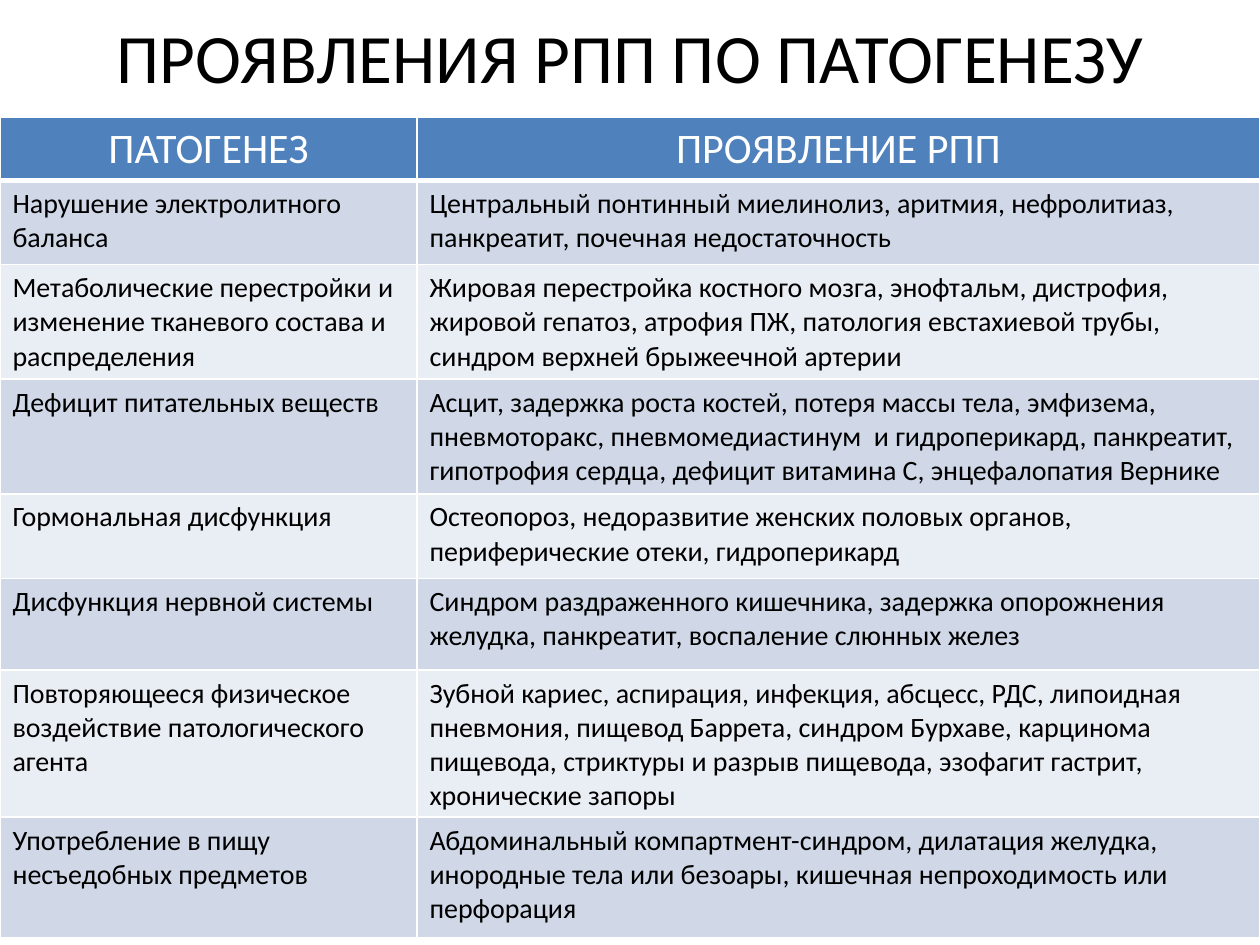
from dataclasses import dataclass

from lxml import etree
from pptx import Presentation
from pptx.dml.color import RGBColor
from pptx.enum.text import MSO_ANCHOR, PP_ALIGN
from pptx.oxml.ns import qn
from pptx.util import Inches, Pt

MIDDLE = MSO_ANCHOR.MIDDLE
CENTER, LEFT = PP_ALIGN.CENTER, PP_ALIGN.LEFT
BLANK_LAYOUT = 6


@dataclass(frozen=True)
class Theme:
    font: str = "Calibri"
    title_size: float = 39.6
    header_size: float = 24
    body_size: float = 16
    dark: str = "000000"
    light: str = "FFFFFF"
    header_fill: str = "4F81BD"
    bands: tuple[str, str] = ("D0D8E8", "E9EDF4")
    thin_line: float = 1
    thick_line: float = 3


@dataclass(frozen=True)
class Box:
    left: float
    top: float
    width: float
    height: float


@dataclass(frozen=True)
class TableRow:
    height: float
    pathogenesis: str
    manifestation: str


THEME = Theme()
SLIDE_WIDTH, SLIDE_HEIGHT = Inches(10), Inches(7.5)
TITLE = "ПРОЯВЛЕНИЯ РПП ПО ПАТОГЕНЕЗУ"
TITLE_BOX = Box(0.05, -0.025, 0.9, 0.167)
TABLE_BOX = Box(0, 0.124, 1, 0.87)
COLUMN_SHARES = (0.331, 0.669)
ROWS = (
    TableRow(0.5, "ПАТОГЕНЕЗ", "ПРОЯВЛЕНИЕ РПП"),
    TableRow(0.67, "Нарушение электролитного баланса",
             "Центральный понтинный миелинолиз, аритмия, нефролитиаз, "
             "панкреатит, почечная недостаточность"),
    TableRow(0.91, "Метаболические перестройки и изменение тканевого состава и распределения",
             "Жировая перестройка костного мозга, энофтальм, дистрофия, "
             "жировой гепатоз, атрофия ПЖ, патология евстахиевой трубы, "
             "синдром верхней брыжеечной артерии"),
    TableRow(0.91, "Дефицит питательных веществ",
             "Асцит, задержка роста костей, потеря массы тела, эмфизема, "
             "пневмоторакс, пневмомедиастинум  и гидроперикард, панкреатит, "
             "гипотрофия сердца, дефицит витамина С, энцефалопатия Вернике"),
    TableRow(0.67, "Гормональная дисфункция",
             "Остеопороз, недоразвитие женских половых органов, "
             "периферические отеки, гидроперикард"),
    TableRow(0.73, "Дисфункция нервной системы",
             "Синдром раздраженного кишечника, задержка опорожнения "
             "желудка, панкреатит, воспаление слюнных желез"),
    TableRow(0.95, "Повторяющееся физическое воздействие патологического агента",
             "Зубной кариес, аспирация, инфекция, абсцесс, РДС, липоидная "
             "пневмония, пищевод Баррета, синдром Бурхаве, карцинома "
             "пищевода, стриктуры и разрыв пищевода, эзофагит гастрит, "
             "хронические запоры"),
    TableRow(0.96, "Употребление в пищу несъедобных предметов",
             "Абдоминальный компартмент-синдром, дилатация желудка, "
             "инородные тела или безоары, кишечная непроходимость или "
             "перфорация"),
)


def place(box: Box) -> tuple[int, int, int, int]:
    return (int(box.left * SLIDE_WIDTH), int(box.top * SLIDE_HEIGHT),
            int(box.width * SLIDE_WIDTH), int(box.height * SLIDE_HEIGHT))


def write_text(text_frame, text: str, size: float, color: str, alignment) -> None:
    text_frame.text = text
    paragraph = text_frame.paragraphs[0]
    paragraph.alignment = alignment
    font = paragraph.runs[0].font
    font.name = THEME.font
    font.size = Pt(size)
    font.bold = False
    font.color.rgb = RGBColor.from_string(color)


def add_border(cell, side: str, width: float) -> None:
    properties = cell._tc.get_or_add_tcPr()
    line = etree.SubElement(properties, qn(f"a:ln{side}"), w=str(Pt(width)))
    fill = etree.SubElement(line, qn("a:solidFill"))
    etree.SubElement(fill, qn("a:srgbClr"), val=THEME.light)


def format_cell(cell, text: str, row_index: int) -> None:
    is_header = row_index == 0
    top = THEME.thick_line if row_index == 1 else THEME.thin_line
    bottom = THEME.thick_line if is_header else THEME.thin_line
    widths = {"L": THEME.thin_line, "R": THEME.thin_line, "T": top, "B": bottom}
    for side, width in widths.items():
        add_border(cell, side, width)
    band = THEME.bands[(row_index - 1) % len(THEME.bands)]
    cell.fill.solid()
    cell.fill.fore_color.rgb = RGBColor.from_string(THEME.header_fill if is_header else band)
    if is_header:
        write_text(cell.text_frame, text, THEME.header_size, THEME.light, CENTER)
    else:
        write_text(cell.text_frame, text, THEME.body_size, THEME.dark, LEFT)


def add_title(slide) -> None:
    shape = slide.shapes.add_textbox(*place(TITLE_BOX))
    shape.text_frame.word_wrap = True
    shape.text_frame.vertical_anchor = MIDDLE
    write_text(shape.text_frame, TITLE, THEME.title_size, THEME.dark, CENTER)


def add_manifestation_table(slide) -> None:
    shape = slide.shapes.add_table(len(ROWS), len(COLUMN_SHARES), *place(TABLE_BOX))
    table = shape.table
    for column, share in zip(table.columns, COLUMN_SHARES):
        column.width = int(share * SLIDE_WIDTH)
    for row_index, row in enumerate(ROWS):
        table.rows[row_index].height = Inches(row.height)
        for column_index, text in enumerate((row.pathogenesis, row.manifestation)):
            format_cell(table.cell(row_index, column_index), text, row_index)


def main() -> None:
    presentation = Presentation()
    presentation.slide_width = SLIDE_WIDTH
    presentation.slide_height = SLIDE_HEIGHT
    slide = presentation.slides.add_slide(presentation.slide_layouts[BLANK_LAYOUT])
    add_title(slide)
    add_manifestation_table(slide)
    presentation.save("out.pptx")


if __name__ == "__main__":
    main()
